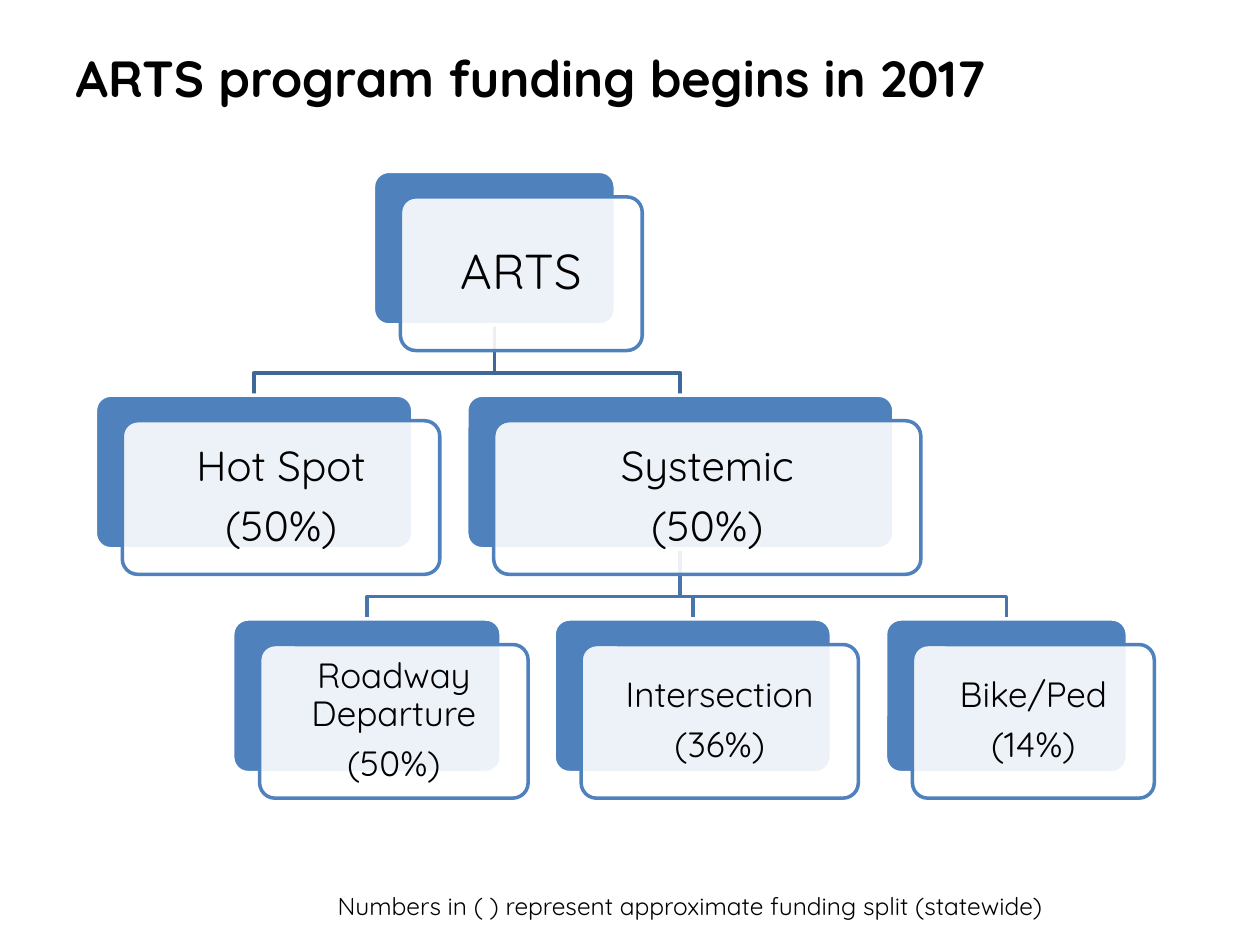
from dataclasses import dataclass

from lxml import etree
from pptx import Presentation
from pptx.dml.color import RGBColor
from pptx.enum.shapes import MSO_SHAPE
from pptx.enum.text import MSO_ANCHOR, MSO_AUTO_SIZE, PP_ALIGN
from pptx.oxml.ns import qn
from pptx.util import Pt

ROUNDED = MSO_SHAPE.ROUNDED_RECTANGLE
MIDDLE = MSO_ANCHOR.MIDDLE
LEFT, CENTER = PP_ALIGN.LEFT, PP_ALIGN.CENTER
FIT_TEXT = MSO_AUTO_SIZE.SHAPE_TO_FIT_TEXT

FONT = "Quicksand"
COLORS = {
    "text": "000000",
    "card": "4F81BD",
    "paper": "FFFFFF",
    "upper_link": "3F6797",
    "lower_link": "4875AC",
}
TOP, LEVEL_STEP, CARD_HEIGHT = 97.9, 127.9, 87.8
SHIFT_X, SHIFT_Y = 15.4, 14.6
BEND = 27.3
LINE_WIDTH = 2


@dataclass(frozen=True)
class Program:
    label: str
    level: int
    left: float
    width: float
    size: int
    inset: float

    @property
    def top(self) -> float:
        return TOP + self.level * LEVEL_STEP

    @property
    def bottom(self) -> float:
        return self.top + CARD_HEIGHT

    @property
    def center(self) -> float:
        return self.left + self.width / 2


@dataclass(frozen=True)
class Branch:
    parent: Program
    children: tuple[Program, ...]
    color: str


ARTS = Program("ARTS", 0, 213.4, 138.2, 28, 11)
HOT_SPOT = Program("Hot Spot\n(50%)", 1, 54.5, 181.4, 24, 9.8)
SYSTEMIC = Program("Systemic\n(50%)", 1, 266.7, 244.1, 24, 9.8)
ROADWAY = Program("Roadway Departure\n(50%)", 2, 133, 153.4, 20, 8.4)
INTERSECTION = Program("Intersection\n(36%)", 2, 316.7, 158.4, 20, 8.4)
BIKE_PED = Program("Bike/Ped\n(14%)", 2, 506, 138.2, 20, 8.4)

PROGRAMS = (ARTS, HOT_SPOT, SYSTEMIC, ROADWAY, INTERSECTION, BIKE_PED)
BRANCHES = (
    Branch(SYSTEMIC, (BIKE_PED, INTERSECTION, ROADWAY), "lower_link"),
    Branch(ARTS, (SYSTEMIC, HOT_SPOT), "upper_link"),
)


def rgb(name: str) -> RGBColor:
    return RGBColor.from_string(COLORS[name])


def write_text(frame, text: str, *, size: float, bold: bool = False,
               align=LEFT, line_spacing: float = 1.0,
               space_after: float = 0) -> None:
    frame.text = text
    for paragraph in frame.paragraphs:
        paragraph.alignment = align
        paragraph.line_spacing = line_spacing
        paragraph.space_before = Pt(0)
        paragraph.space_after = Pt(space_after)
        paragraph.font.name = FONT
        paragraph.font.size = Pt(size)
        paragraph.font.bold = bold
        paragraph.font.color.rgb = rgb("text")


def draw_link(shapes, parent: Program, child: Program, color: str) -> None:
    bend = Pt(parent.bottom + BEND)
    start, end = Pt(parent.center), Pt(child.center)
    builder = shapes.build_freeform(start, Pt(parent.bottom), scale=1.0)
    builder.add_line_segments(
        [(start, bend), (end, bend), (end, Pt(child.top))], close=False)
    link = builder.convert_to_shape()
    link.shadow.inherit = False
    link.fill.background()
    link.line.color.rgb = rgb(color)
    link.line.width = Pt(LINE_WIDTH)


def draw_card(shapes, left: float, top: float, width: float,
              fill: str, outline: str):
    card = shapes.add_shape(ROUNDED, Pt(left), Pt(top), Pt(width), Pt(CARD_HEIGHT))
    card.adjustments[0] = 0.1
    card.shadow.inherit = False
    card.fill.solid()
    card.fill.fore_color.rgb = rgb(fill)
    card.line.color.rgb = rgb(outline)
    card.line.width = Pt(LINE_WIDTH)
    return card


def draw_program(shapes, program: Program) -> None:
    draw_card(shapes, program.left, program.top, program.width, "card", "paper")
    front = draw_card(shapes, program.left + SHIFT_X, program.top + SHIFT_Y,
                      program.width, "paper", "card")
    fill_color = front.element.spPr.find(qn("a:solidFill")).find(qn("a:srgbClr"))
    etree.SubElement(fill_color, qn("a:alpha")).set("val", "90000")
    frame = front.text_frame
    frame.word_wrap = True
    frame.vertical_anchor = MIDDLE
    frame.margin_left = frame.margin_right = Pt(program.inset)
    frame.margin_top = frame.margin_bottom = Pt(program.inset)
    write_text(frame, program.label, size=program.size, align=CENTER,
               line_spacing=0.9, space_after=0.35 * program.size)


def main() -> None:
    presentation = Presentation()
    presentation.slide_width, presentation.slide_height = Pt(720), Pt(540)
    slide = presentation.slides.add_slide(presentation.slide_layouts[5])
    shapes = slide.shapes

    title = shapes.title
    title.left, title.top, title.width, title.height = Pt(36), Pt(21.6), Pt(648), Pt(44.6)
    title.text_frame.vertical_anchor = MIDDLE
    write_text(title.text_frame, "ARTS program funding begins in 2017",
               size=29, bold=True)

    for branch in BRANCHES:
        for child in branch.children:
            draw_link(shapes, branch.parent, child, branch.color)
    for program in PROGRAMS:
        draw_program(shapes, program)

    footnote = shapes.add_textbox(Pt(185.8), Pt(505.4), Pt(437), Pt(24.5))
    footnote.text_frame.word_wrap = False
    footnote.text_frame.auto_size = FIT_TEXT
    write_text(footnote.text_frame,
               "Numbers in ( ) represent approximate funding split (statewide)",
               size=14)

    presentation.save("out.pptx")


if __name__ == "__main__":
    main()
